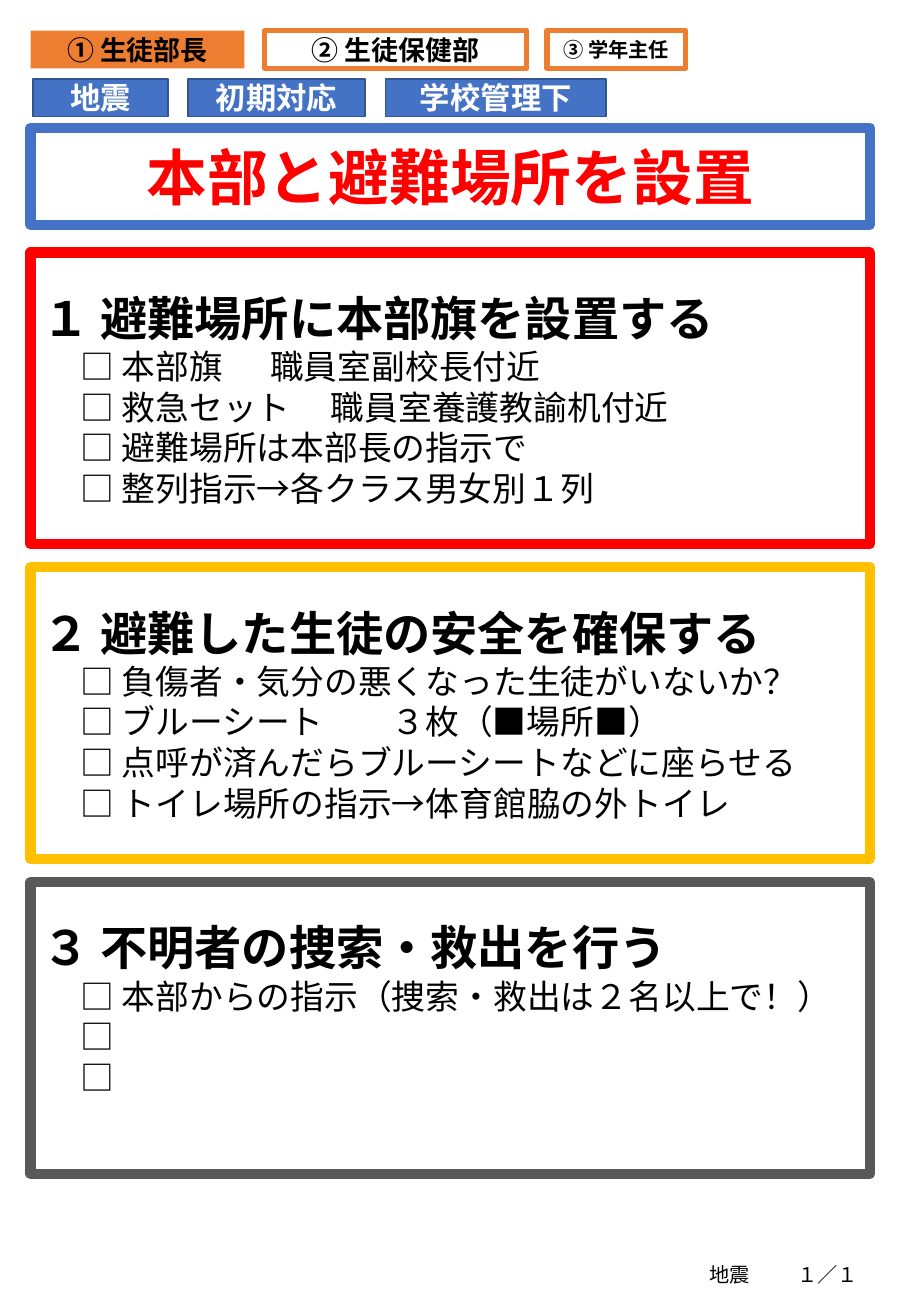
from lxml.etree import SubElement
from pptx import Presentation
from pptx.dml.color import RGBColor
from pptx.enum.shapes import MSO_SHAPE as Shape
from pptx.enum.text import MSO_ANCHOR as Anchor, PP_ALIGN as Align
from pptx.oxml.ns import qn
from pptx.util import Cm, Pt

JAPANESE = "Noto Sans CJK JP"
LEFT, WIDTH = 0.64, 17.55
TAG_GAP, TAG_HEIGHT = 0.42, 0.79
SECTION_TOP, SECTION_HEIGHT, SECTION_PITCH = 5.28, 6.1, 6.58

ROLES = [
    ("① 生徒部長", 4.47, 16, "ED7D31", None),
    ("② 生徒保健部", 5.49, 16, "FFFFFF", "ED7D31"),
    ("③ 学年主任", 2.9, 12, "FFFFFF", "ED7D31"),
]
TOPICS = [("地震", 2.82), ("初期対応", 3.71), ("学校管理下", 4.62)]
SECTIONS = [
    ("１ 避難場所に本部旗を設置する", "FF0000", 6.86, [
        "本部旗\t 職員室副校長付近",
        "救急セット\t 職員室養護教諭机付近",
        "避難場所は本部長の指示で",
        "整列指示→各クラス男女別１列",
    ]),
    ("２ 避難した生徒の安全を確保する", "FFC000", 6.3, [
        "負傷者・気分の悪くなった生徒がいないか？",
        "ブルーシート\t ３枚（■場所■）",
        "点呼が済んだらブルーシートなどに座らせる",
        "トイレ場所の指示→体育館脇の外トイレ",
    ]),
    ("３ 不明者の捜索・救出を行う", "595959", None, [
        "本部からの指示（捜索・救出は２名以上で！）",
        "",
        "",
    ]),
]


def color(code):
    """Return the colour for a hex string."""
    return RGBColor.from_string(code)


def write(paragraph, text, size, ink="000000", bold=False, align=Align.LEFT,
          font=JAPANESE, line=None, indent=0, tab=None):
    """Write formatted text into a paragraph."""
    paragraph.alignment = align
    if line:
        paragraph.line_spacing = Pt(line)
    properties = paragraph._p.get_or_add_pPr()
    if indent:
        properties.set("marL", str(Cm(indent)))
        properties.set("indent", "0")
    if tab:
        stops = SubElement(properties, qn("a:tabLst"))
        SubElement(stops, qn("a:tab"), pos=str(Cm(tab)), algn="l")
    run = paragraph.add_run()
    run.text = text
    run.font.size = Pt(size)
    run.font.bold = bold
    run.font.name = font
    run.font.color.rgb = color(ink)
    SubElement(run._r.get_or_add_rPr(), qn("a:ea"), typeface=JAPANESE)


def add_panel(slide, box, fill="FFFFFF", border=None, weight=1, anchor=Anchor.MIDDLE):
    """Add a rectangle and return its text frame."""
    panel = slide.shapes.add_shape(Shape.RECTANGLE, *map(Cm, box))
    panel.shadow.inherit = False
    panel.fill.solid()
    panel.fill.fore_color.rgb = color(fill)
    if border:
        panel.line.color.rgb = color(border)
        panel.line.width = Pt(weight)
    else:
        panel.line.fill.background()
    frame = panel.text_frame
    frame.word_wrap = True
    frame.vertical_anchor = anchor
    if anchor == Anchor.MIDDLE:
        frame.margin_top = frame.margin_bottom = 0
    return frame


def add_roles(slide, left, top):
    """Place the row of responsible people."""
    for role, width, size, fill, border in ROLES:
        frame = add_panel(slide, (left, top, width, TAG_HEIGHT), fill, border, 3)
        write(frame.paragraphs[0], role, size, bold=True, align=Align.CENTER)
        left += width + TAG_GAP


def add_topics(slide, left, top):
    """Place the row of situation tags."""
    for topic, width in TOPICS:
        frame = add_panel(slide, (left, top, width, TAG_HEIGHT), "4472C4", "325491")
        write(frame.paragraphs[0], topic, 18, "FFFFFF", bold=True, align=Align.CENTER)
        left += width + TAG_GAP


def add_title(slide, box):
    """Place the framed title."""
    frame = add_panel(slide, box, border="4472C4", weight=6)
    write(frame.paragraphs[0], "本部と避難場所を設置", 36, "FF0000", bold=True,
          align=Align.CENTER)


def add_section(slide, box, heading, border, tab, tasks):
    """Place a framed heading with its checklist."""
    frame = add_panel(slide, box, border=border, weight=6, anchor=Anchor.TOP)
    write(frame.paragraphs[0], heading, 28, bold=True, line=51.8)
    for task in tasks:
        write(frame.add_paragraph(), f"□ {task}".strip(), 20, line=24, indent=0.79,
              tab=tab if "\t" in task else None)


def add_footer(slide, right, top):
    """Place the topic and the page number up to the right edge."""
    width = 1.8
    labels = [("地震", 2, Align.LEFT), ("１／１", 1, Align.RIGHT)]
    for label, position, align in labels:
        left = right - position * width
        frame = slide.shapes.add_textbox(Cm(left), Cm(top), Cm(width), Cm(0.79)).text_frame
        frame.word_wrap = True
        if align == Align.RIGHT:
            frame.margin_left = 0
        write(frame.paragraphs[0], label, 12, font="Calibri", align=align, line=15)


def main():
    """Build and save the action card."""
    deck = Presentation()
    deck.slide_width, deck.slide_height = Cm(19.05), Cm(27.51)
    slide = deck.slides.add_slide(deck.slide_layouts[6])
    add_roles(slide, LEFT, 0.64)
    add_topics(slide, LEFT + 0.05, 1.65)
    add_title(slide, (LEFT, 2.67, WIDTH, 2.03))
    for index, section in enumerate(SECTIONS):
        top = SECTION_TOP + index * SECTION_PITCH
        add_section(slide, (LEFT, top, WIDTH, SECTION_HEIGHT), *section)
    add_footer(slide, LEFT + WIDTH, 26.24)
    deck.save("out.pptx")


if __name__ == "__main__":
    main()
